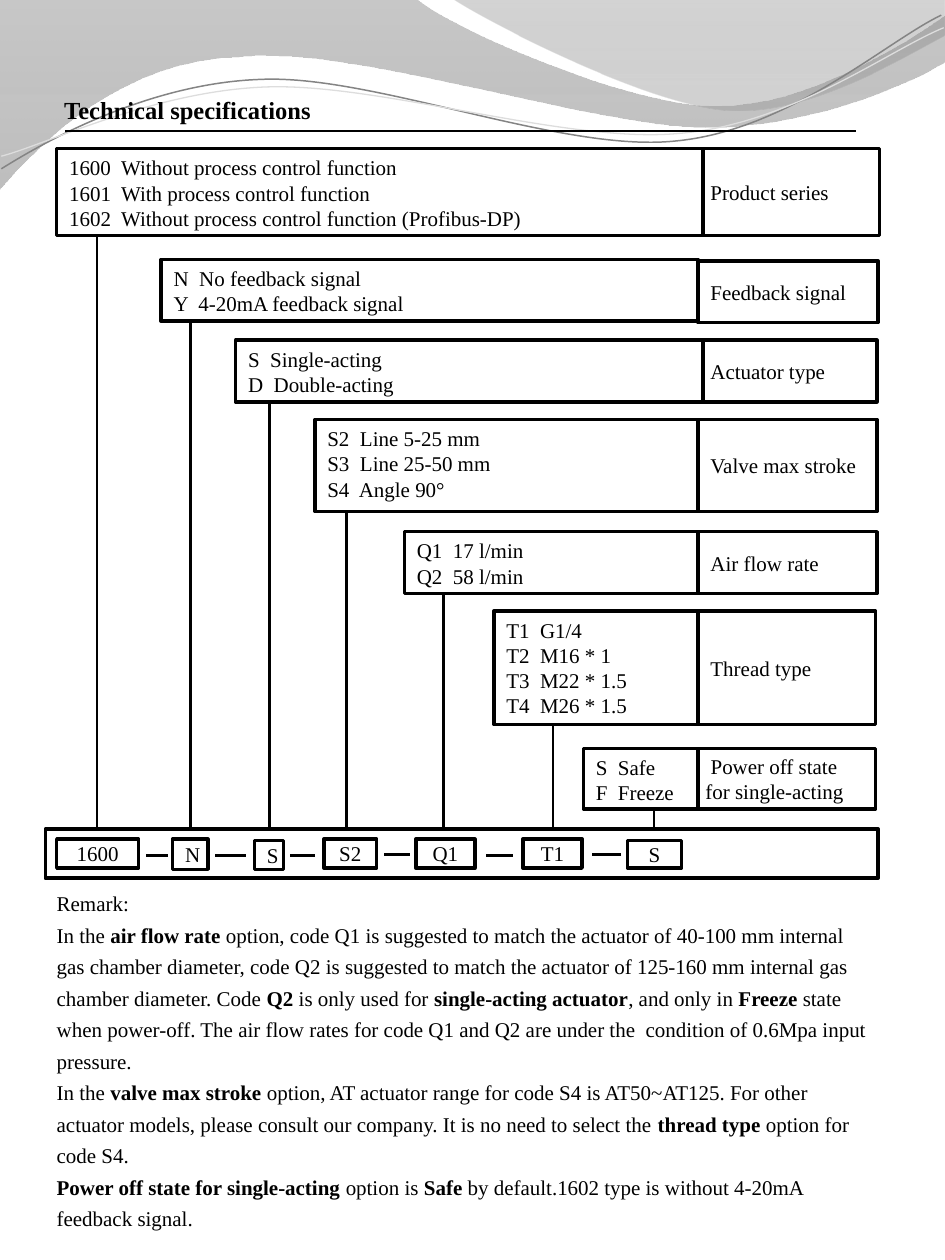
import math

import pptx
import pptx.dml.color
import pptx.enum.shapes
import pptx.enum.text
import pptx.oxml.ns
import pptx.util
from lxml import etree

Inches, Pt, RGBColor = pptx.util.Inches, pptx.util.Pt, pptx.dml.color.RGBColor
ALIGN, ANCHOR = pptx.enum.text.PP_ALIGN, pptx.enum.text.MSO_ANCHOR
qn = pptx.oxml.ns.qn

BLACK = RGBColor(0x00, 0x00, 0x00)
WHITE = RGBColor(0xFF, 0xFF, 0xFF)
GRAY = RGBColor(0x84, 0x84, 0x84)
MID_GRAY = RGBColor(0x88, 0x88, 0x88)
DARK_GRAY = RGBColor(0x6F, 0x6F, 0x6F)
SOFT_GRAY = RGBColor(0x9D, 0x9D, 0x9D)
PALE_GRAY = RGBColor(0xDD, 0xDD, 0xDD)

TITLE = "Technical specifications"
FIRST_AUTO_NUMBER = 1601
# label, label box, options, option box
SERIES = [
    ("Thread type", (5.54, 4.85, 1.41, 0.9),
     ["T1  G1/4", "T2  M16 * 1", "T3  M22 * 1.5", "T4  M26 * 1.5"], (3.92, 4.85, 1.62, 0.9)),
    (" Power off state for single-acting", (5.5, 5.94, 1.45, 0.48),
     ["S  Safe", "F  Freeze"], (4.63, 5.94, 0.91, 0.48)),
    ("Valve max stroke", (5.54, 3.33, 1.42, 0.73),
     ["S2  Line 5-25 mm", "S3  Line 25-50 mm", "S4  Angle 90°"], (2.5, 3.33, 3.04, 0.73)),
    ("Air flow rate", (5.54, 4.22, 1.42, 0.49),
     ["Q1  17 l/min", "Q2  58 l/min"], (3.21, 4.22, 2.33, 0.49)),
    ("Feedback signal", (5.54, 2.07, 1.43, 0.49),
     ["N  No feedback signal", "Y  4-20mA feedback signal"], (1.28, 2.06, 4.26, 0.49)),
    ("Actuator type", (5.54, 2.7, 1.42, 0.49),
     ["S  Single-acting", "D  Double-acting"], (1.87, 2.7, 3.71, 0.49)),
    ("Product series", (5.54, 1.18, 1.44, 0.69),
     ["1600  Without process control function", "  With process control function",
      "  Without process control function (Profibus-DP)"], (0.45, 1.18, 5.13, 0.69)),
]
# x, top, bottom
STEMS = [(0.77, 1.87, 6.58), (1.51, 2.55, 6.57), (2.14, 2.97, 6.67), (2.75, 3.54, 6.58),
         (3.52, 4.45, 6.58), (4.39, 5.38, 6.58), (5.19, 6.26, 6.58)]
BAR = (0.36, 6.58, 6.61, 0.39)
CODES = [("1600", (0.45, 6.66, 0.65, 0.23)), ("N", (1.37, 6.66, 0.28, 0.24)),
         ("S", (2.02, 6.67, 0.23, 0.23)), ("S2", (2.57, 6.66, 0.42, 0.23)),
         ("Q1", (3.3, 6.66, 0.47, 0.23)), ("T1", (4.15, 6.66, 0.47, 0.23)),
         ("S", (4.98, 6.67, 0.43, 0.22))]
# right, left, y
DASHES = [(1.33, 1.16, 6.79), (1.95, 1.71, 6.79), (2.5, 2.3, 6.79), (3.25, 3.05, 6.78),
          (4.07, 3.86, 6.79), (4.93, 4.7, 6.78)]
# ** switches bold on and off
REMARKS = [
    "Remark:",
    "In the **air flow rate **option, code Q1 is suggested to match the actuator of "
    "40-100 mm internal gas chamber diameter, code Q2 is suggested to match the actuator of "
    "125-160 mm internal gas chamber diameter. Code **Q2** is only used for "
    "**single-acting actuator**, and only in **Freeze **state when power-off. The air flow "
    "rates for code Q1 and Q2 are under the  condition of 0.6Mpa input pressure.",
    "In the **valve max stroke **option, AT actuator range for code S4 is AT50~AT125. For "
    "other actuator models, please consult our company. It is no need to select the "
    "**thread type **option for code S4.",
    "**Power off state for single-acting **option is **Safe** by default.1602 type is "
    "without 4-20mA feedback signal.",
]
# Outlines: a pair is a straight step, six numbers are a Bezier step.
FILLED_WAVES = [
    ([(0, -0.01), (3.3, -0.01), (3.57, 0.22, 4.98, 0.84, 5.69, 0.84),
      (6.4, 0.84, 7.19, 0.34, 7.5, 0.12), (7.51, 0.48),
      (7.38, 0.58, 6.52, 1.01, 5.59, 1.01), (4.66, 1, 2.86, 0.37, 1.93, 0.45),
      (0.97, 0.47, 0.34, 1.11, -0.01, 1.51), (0, -0.01)],
     [(0, GRAY, 45), (1, MID_GRAY, 55)]),
    ([(3.59, -0.01), (3.82, 0.15, 5.11, 0.82, 5.77, 0.87),
      (6.42, 0.92, 7.21, 0.43, 7.5, 0.28), (7.5, 0), (3.59, -0.01)],
     [(0, DARK_GRAY, 30), (0.8, SOFT_GRAY, 45)]),
]
# outline, centre, colour, width
LINE_WAVES = [
    ([(0.01, 1.34), (0.36, 1.12, 1.18, 0.66, 2.07, 0.63),
      (2.96, 0.59, 4.45, 1.21, 5.35, 1.12), (6.26, 1.04, 7.03, 0.33, 7.47, 0.12)],
     (3.74, 0.78), GRAY, 0.85),
    ([(0.01, 1.24), (0.36, 1.15, 1.22, 0.72, 2.12, 0.69),
      (3.02, 0.66, 4.49, 1.14, 5.38, 1.06), (6.28, 0.99, 7.05, 0.4, 7.49, 0.22)],
     (3.75, 0.79), PALE_GRAY, 0.75),
]
WAVE_TILT = 2.7
TEXT_FONT = {"name": "Times New Roman", "size": Pt(12), "bold": False}
TITLE_FONT = {**TEXT_FONT, "size": Pt(14), "bold": True}


def apply_format(target, values):
    for name, value in values.items():
        setattr(target, name, value)


def add_run(paragraph, text, font_format):
    run = paragraph.add_run()
    run.text = text
    apply_format(run.font, font_format)
    run.font.color.rgb = BLACK


def place(shape, left, top, width, height):
    apply_format(shape, {"left": Inches(left), "top": Inches(top),
                         "width": Inches(width), "height": Inches(height)})


def turn(point, center, degrees):
    cosine, sine = math.cos(math.radians(degrees)), math.sin(math.radians(degrees))
    dx, dy = point[0] - center[0], point[1] - center[1]
    return center[0] + dx * cosine - dy * sine, center[1] + dx * sine + dy * cosine


def add_wave(slide, steps, close, center=(0, 0), tilt=0):
    """Build the outline from all its points, then join each Bezier step's three."""
    points = [turn(step[index:index + 2], center, tilt)
              for step in steps for index in range(0, len(step), 2)]
    points = [(Inches(x), Inches(y)) for x, y in points]
    builder = slide.shapes.build_freeform(*points[0])
    builder.add_line_segments(points[1:], close=close)
    shape = builder.convert_to_shape()
    shape.shadow.inherit = False
    shape.rotation = -tilt % 360
    segments = iter(list(shape.element.iter(qn("a:lnTo"))))
    for step in steps[1:]:
        first = next(segments)
        if len(step) == 6:
            curve = etree.Element(qn("a:cubicBezTo"))
            first.addprevious(curve)
            for segment in (first, next(segments), next(segments)):
                curve.append(segment[0])
                segment.getparent().remove(segment)
    return shape


def add_waves(slide):
    """Draw the header waves and send them behind the placeholders."""
    waves = []
    for steps, stops in FILLED_WAVES:
        shape = add_wave(slide, steps, True)
        shape.line.fill.background()
        shape.fill.gradient()
        shape.fill.gradient_angle = 270
        for stop, (position, color, _) in zip(shape.fill.gradient_stops, stops):
            stop.position = position
            stop.color.rgb = color
        for node, stop in zip(shape.element.iter(qn("a:srgbClr")), stops):
            etree.SubElement(node, qn("a:alpha"), val=str(stop[2] * 1000))
        waves.append(shape)
    for steps, center, color, width in LINE_WAVES:
        shape = add_wave(slide, steps, False, center, WAVE_TILT)
        shape.fill.background()
        shape.line.color.rgb = color
        shape.line.width = Pt(width)
        waves.append(shape)
    for index, shape in enumerate(waves):
        slide.shapes.element.insert(2 + index, shape.element)


def add_line(slide, *ends):
    connector = slide.shapes.add_connector(
        pptx.enum.shapes.MSO_CONNECTOR.STRAIGHT, *[Inches(end) for end in ends])
    connector.line.color.rgb = BLACK
    connector.line.width = Pt(1.5)
    etree.SubElement(connector.element.spPr, qn("a:effectLst"))


def add_box(slide, box, lines=(), align=ALIGN.LEFT, anchor=ANCHOR.MIDDLE):
    """Add a framed box; a line that opens with a space in a list gets a number."""
    shape = slide.shapes.add_shape(pptx.enum.shapes.MSO_SHAPE.RECTANGLE,
                                   *[Inches(value) for value in box])
    shape.shadow.inherit = False
    shape.fill.solid()
    shape.fill.fore_color.rgb = WHITE
    shape.line.color.rgb = BLACK
    shape.line.width = Pt(2)
    frame = shape.text_frame
    apply_format(frame, {"word_wrap": True, "vertical_anchor": anchor})
    for index, line in enumerate(lines):
        paragraph = frame.add_paragraph() if index else frame.paragraphs[0]
        paragraph.alignment = align
        add_run(paragraph, line, TEXT_FONT)
        if index and line.startswith(" "):
            properties = paragraph._p.get_or_add_pPr()
            properties.set("marL", str(Inches(0.25)))
            properties.set("indent", str(-Inches(0.25)))
            etree.SubElement(properties, qn("a:buAutoNum"), type="arabicPlain",
                             startAt=str(FIRST_AUTO_NUMBER))


def fill_placeholders(slide):
    title, body = slide.placeholders
    place(title, 0.41, 0.7, 2.95, 0.34)
    place(body, 0.35, 6.97, 6.64, 3.13)
    for shape in (title, body):
        apply_format(shape.text_frame, {
            "word_wrap": True, "vertical_anchor": ANCHOR.TOP,
            "auto_size": pptx.enum.text.MSO_AUTO_SIZE.SHAPE_TO_FIT_TEXT})
    heading = title.text_frame.paragraphs[0]
    heading.alignment = ALIGN.LEFT
    add_run(heading, TITLE, TITLE_FONT)
    for index, remark in enumerate(REMARKS):
        frame = body.text_frame
        paragraph = frame.add_paragraph() if index else frame.paragraphs[0]
        apply_format(paragraph, {"line_spacing": 1.25, "space_before": Pt(0)})
        properties = paragraph._p.get_or_add_pPr()
        properties.set("marL", "0")
        properties.set("indent", "0")
        etree.SubElement(properties, qn("a:buNone"))
        for part, text in enumerate(remark.split("**")):
            if text:
                add_run(paragraph, text, {**TEXT_FONT, "bold": part % 2 == 1})


def add_order_code(slide):
    for x, top, bottom in STEMS:
        add_line(slide, x, top, x, bottom)
    add_box(slide, BAR)
    for text, box in CODES:
        add_box(slide, box, [text], ALIGN.CENTER)
    for right, left, y in DASHES:
        add_line(slide, right, y, left, y)
    for label, label_box, options, option_box in SERIES:
        add_box(slide, label_box, [label])
        add_box(slide, option_box, options, anchor=ANCHOR.TOP)


def main():
    presentation = pptx.Presentation()
    presentation.slide_width, presentation.slide_height = Inches(7.5), Inches(10)
    slide = presentation.slides.add_slide(presentation.slide_layouts[1])
    fill_placeholders(slide)
    add_waves(slide)
    add_line(slide, 0.52, 1.04, 6.79, 1.04)
    add_order_code(slide)
    presentation.save("out.pptx")


if __name__ == "__main__":
    main()
